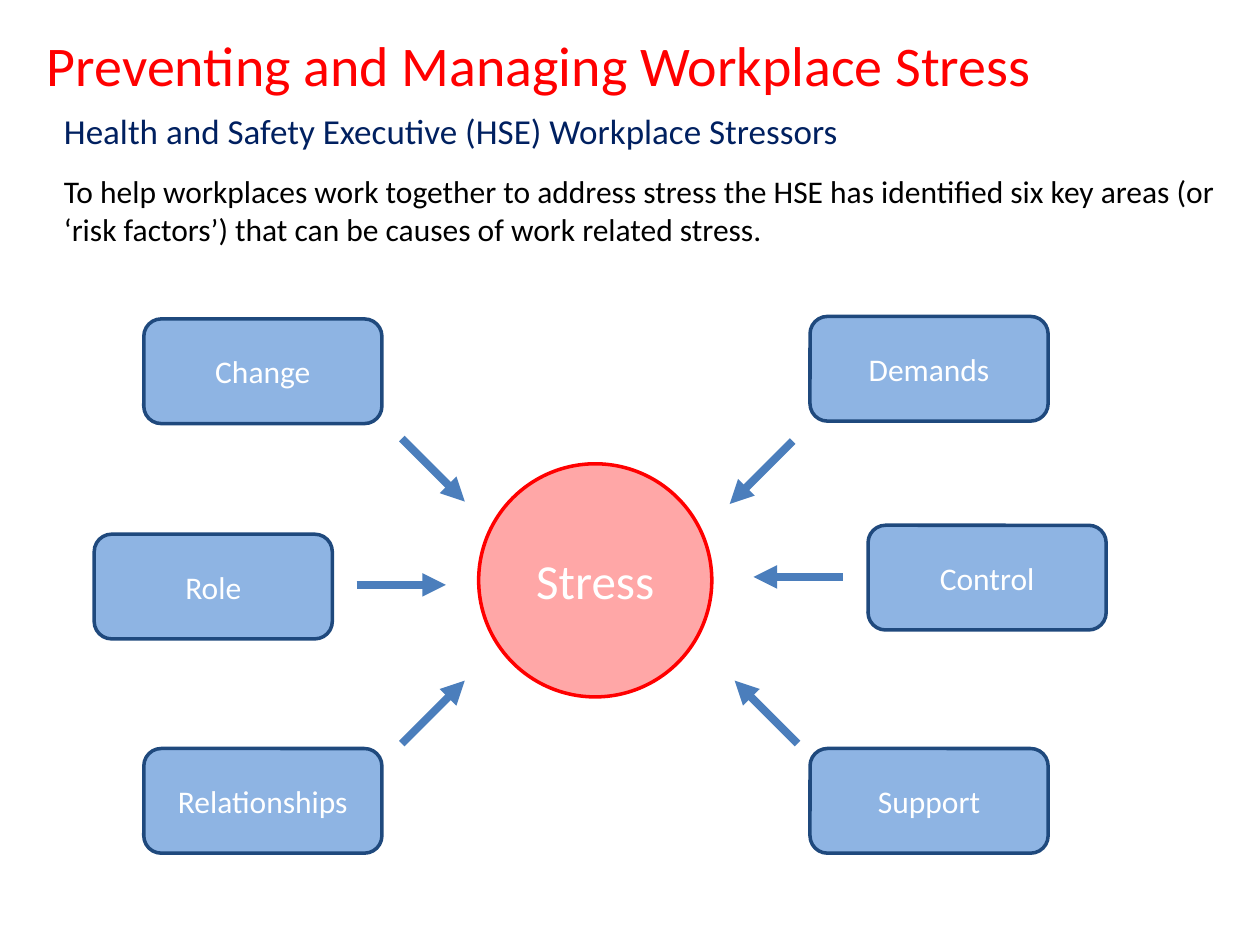
import pptx
import pptx.dml.color
import pptx.enum.shapes
import pptx.enum.text
import pptx.oxml
import pptx.oxml.ns
import pptx.util
from pptx.dml.color import RGBColor
from pptx.util import Cm

RED = RGBColor(0xFF, 0x00, 0x00)
PINK = RGBColor(0xFF, 0xA7, 0xA7)
NAVY = RGBColor(0x00, 0x20, 0x60)
BLACK = RGBColor(0x00, 0x00, 0x00)
WHITE = RGBColor(0xFF, 0xFF, 0xFF)
LIGHT_BLUE = RGBColor(0x8E, 0xB4, 0xE3)
DARK_BLUE = RGBColor(0x1F, 0x49, 0x7D)
ARROW_BLUE = RGBColor(0x4B, 0x7E, 0xBC)

FONT = "Calibri"
FACTOR_WIDTH, FACTOR_HEIGHT = 4.8, 2.11
DIAGONAL, STRAIGHT = 1.27, 1.8

FACTORS = [
    ("Change", (2.9, 6.43), (8.1, 8.84), (DIAGONAL, DIAGONAL)),
    ("Role", (1.9, 10.77), (7.19, 11.79), (STRAIGHT, 0)),
    ("Relationships", (2.9, 15.09), (8.1, 14.99), (DIAGONAL, -DIAGONAL)),
    ("Demands", (16.33, 6.38), (15.98, 8.89), (-DIAGONAL, DIAGONAL)),
    ("Control", (17.5, 10.59), (16.99, 11.63), (-STRAIGHT, 0)),
    ("Support", (16.33, 15.09), (16.08, 14.99), (-DIAGONAL, -DIAGONAL)),
]


def write_text(box, text, size, color, align):
    box.text_frame.text = text
    para = box.text_frame.paragraphs[0]
    para.alignment = align
    para.font.name = FONT
    para.font.size = pptx.util.Pt(size)
    para.font.color.rgb = color


def set_title(page, text):
    title = page.shapes.title
    title.left, title.top = Cm(0.69), Cm(0.48)
    title.width, title.height = Cm(22.63), Cm(1.63)
    write_text(title, text, 32, RED, pptx.enum.text.PP_ALIGN.LEFT)
    title.text_frame.vertical_anchor = pptx.enum.text.MSO_ANCHOR.TOP
    title.text_frame.auto_size = pptx.enum.text.MSO_AUTO_SIZE.NONE


def add_text(page, text, top, width, height, size, color):
    box = page.shapes.add_textbox(Cm(1.04), Cm(top), Cm(width), Cm(height))
    box.text_frame.word_wrap = True
    write_text(box, text, size, color, pptx.enum.text.PP_ALIGN.LEFT)


def add_node(page, kind, text, left, top, width, height, size, fill, line):
    node = page.shapes.add_shape(kind, Cm(left), Cm(top), Cm(width), Cm(height))
    node.shadow.inherit = False
    node.fill.solid()
    node.fill.fore_color.rgb = fill
    node.line.color.rgb = line
    node.line.width = pptx.util.Pt(2)
    frame = node.text_frame
    frame.margin_left = frame.margin_right = 0
    frame.margin_top = frame.margin_bottom = 0
    frame.vertical_anchor = pptx.enum.text.MSO_ANCHOR.MIDDLE
    write_text(node, text, size, WHITE, pptx.enum.text.PP_ALIGN.CENTER)


def add_arrow(page, start, step):
    (x, y), (dx, dy) = start, step
    arrow = page.shapes.add_connector(
        pptx.enum.shapes.MSO_CONNECTOR.STRAIGHT, Cm(x), Cm(y), Cm(x + dx), Cm(y + dy)
    )
    arrow.line.color.rgb = ARROW_BLUE
    arrow.line.width = pptx.util.Pt(4.5)
    head = pptx.oxml.parse_xml(
        f'<a:tailEnd {pptx.oxml.ns.nsdecls("a")} type="triangle"/>'
    )
    arrow.line._get_or_add_ln().append(head)
    effects = pptx.oxml.parse_xml(f'<a:effectLst {pptx.oxml.ns.nsdecls("a")}/>')
    arrow._element.spPr.append(effects)


def main():
    deck = pptx.Presentation()
    deck.slide_width, deck.slide_height = Cm(25.4), Cm(19.05)
    page = deck.slides.add_slide(deck.slide_layouts[5])
    shapes = pptx.enum.shapes.MSO_SHAPE

    set_title(page, "Preventing and Managing Workplace Stress")
    add_text(page, "Health and Safety Executive (HSE) Workplace Stressors",
             2.08, 18.11, 1.12, 20, NAVY)
    add_text(page, "To help workplaces work together to address stress the HSE has "
             "identified six key areas (or ‘risk factors’) that can be causes of "
             "work related stress.", 3.35, 23.75, 1.8, 18, BLACK)

    add_node(page, shapes.OVAL, "Stress", 9.65, 9.35, 4.7, 4.7, 28, PINK, RED)
    for label, (left, top), start, step in FACTORS:
        add_node(page, shapes.FLOWCHART_ALTERNATE_PROCESS, label, left, top,
                 FACTOR_WIDTH, FACTOR_HEIGHT, 18, LIGHT_BLUE, DARK_BLUE)
        add_arrow(page, start, step)

    deck.save("out.pptx")


if __name__ == "__main__":
    main()
